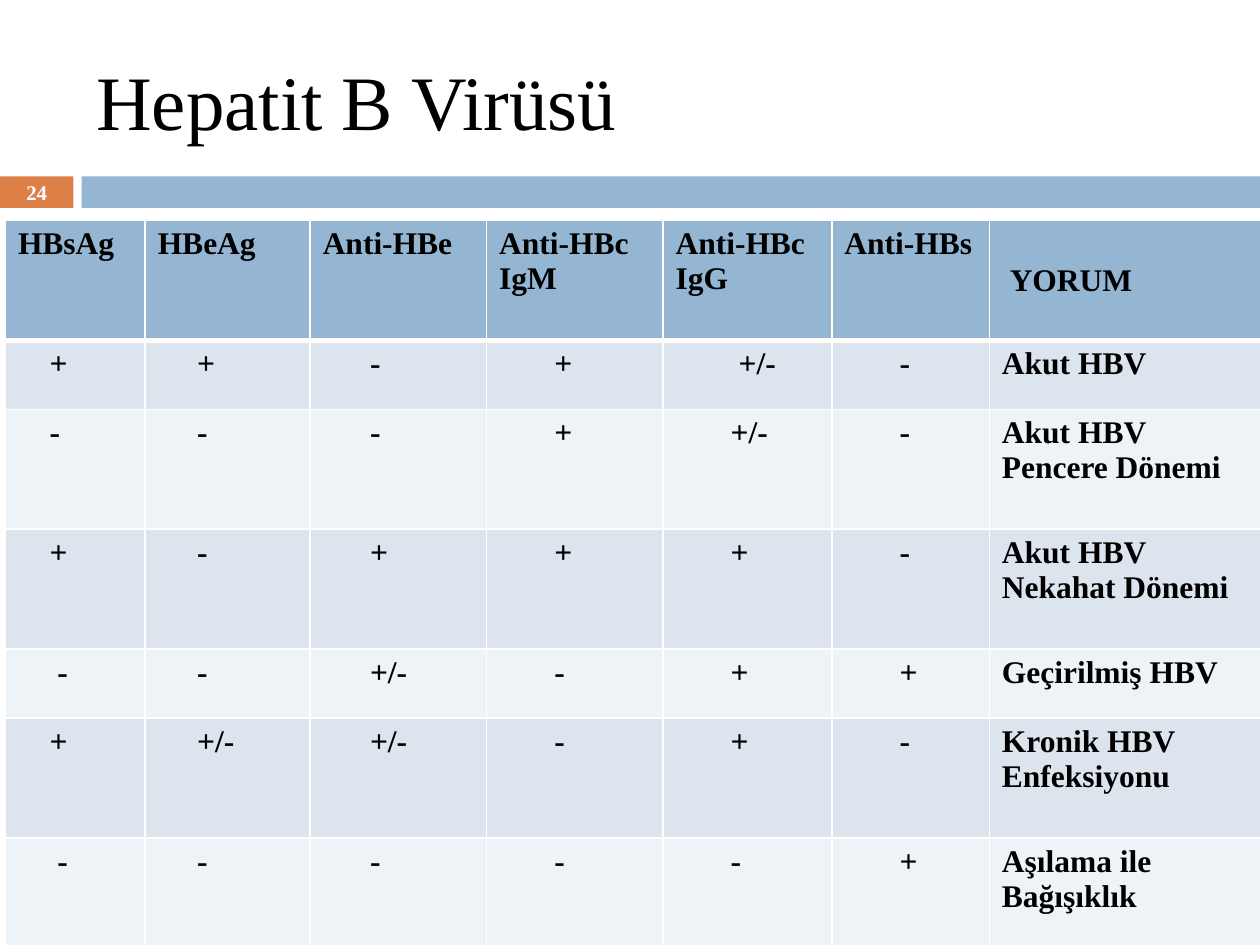
from dataclasses import dataclass

from lxml import etree
from pptx import Presentation
from pptx import util as u
from pptx.dml.color import RGBColor
from pptx.enum import shapes, text
from pptx.oxml import ns

Pt = u.Pt


@dataclass(frozen=True)
class Theme:
    """Colours, type sizes and line widths of the slide."""
    font: str = "Times New Roman"
    black: str = "000000"
    white: str = "FFFFFF"
    orange: str = "DD8047"
    blue: str = "94B6D2"
    bands: tuple = ("DCE5EE", "EEF3F7")
    title_size: float = 44
    number_size: float = 11.9
    table_size: float = 18
    rule: float = 1
    header_rule: float = 3


THEME = Theme()
BAR_TOP, BAR_HEIGHT = 100.8, 18
INSET, INDENT_STEP = 7.2, 4.5
COLUMN_WIDTHS = (79.9, 94.3, 100.8, 100.8, 96.5, 90, 156.2)
SHORT_ROW, TALL_ROW = 39.6, 68.4
MARKERS = ("HBsAg", "HBeAg", "Anti-HBe", "Anti-HBc IgM", "Anti-HBc IgG", "Anti-HBs")
MARKER_INDENTS = (4, 5, 6, 7, 7, 7)
EXTRA_INDENTS = {(1, 4), (4, 0), (6, 0)}
PROFILES = (
    ("+ + - + +/- -", ("Akut HBV",), SHORT_ROW),
    ("- - - + +/- -", ("Akut HBV", "Pencere Dönemi"), TALL_ROW),
    ("+ - + + + -", ("Akut HBV", "Nekahat Dönemi"), TALL_ROW),
    ("- - +/- - + +", ("Geçirilmiş HBV",), SHORT_ROW),
    ("+ +/- +/- - + -", ("Kronik HBV Enfeksiyonu",), TALL_ROW),
    ("- - - - - +", ("Aşılama ile Bağışıklık",), TALL_ROW),
)


def write(frame, lines, size, color, bold=False, align=None):
    """Write each line as a paragraph with one formatted run."""
    for index, line in enumerate(lines):
        paragraph = frame.add_paragraph() if index else frame.paragraphs[0]
        paragraph.alignment = align
        run = paragraph.add_run()
        run.text = line
        run.font.name, run.font.size, run.font.bold = THEME.font, Pt(size), bold
        run.font.color.rgb = RGBColor.from_string(color)


def add_bar(slide, left, width, color):
    """Add one part of the band under the title."""
    bar = slide.shapes.add_shape(
        shapes.MSO_SHAPE.RECTANGLE, Pt(left), Pt(BAR_TOP), Pt(width), Pt(BAR_HEIGHT))
    bar.shadow.inherit = False
    bar.fill.solid()
    bar.fill.fore_color.rgb = RGBColor.from_string(color)
    bar.line.fill.background()


def add_label(slide, box, label, size, color, inset=0, bold=False, align=None):
    """Add a vertically centred line of text."""
    frame = slide.shapes.add_textbox(*map(Pt, box)).text_frame
    frame.word_wrap = True
    frame.vertical_anchor = text.MSO_ANCHOR.MIDDLE
    frame.margin_left = frame.margin_right = Pt(inset)
    frame.margin_top = frame.margin_bottom = 0
    write(frame, [label], size, color, bold, align)


def set_borders(cell, top, bottom):
    """Draw white rules on all four sides of a cell."""
    properties = cell._tc.get_or_add_tcPr()
    widths = {"lnL": THEME.rule, "lnR": THEME.rule, "lnT": top, "lnB": bottom}
    for position, (side, width) in enumerate(widths.items()):
        rule = etree.Element(ns.qn(f"a:{side}"), w=str(Pt(width)))
        fill = etree.SubElement(rule, ns.qn("a:solidFill"))
        etree.SubElement(fill, ns.qn("a:srgbClr"), val=THEME.white)
        properties.insert(position, rule)


def fill_cell(cell, lines, color, indent=0, top=THEME.rule, bottom=THEME.rule):
    """Set the text, fill, indent and rules of a cell."""
    cell.fill.solid()
    cell.fill.fore_color.rgb = RGBColor.from_string(color)
    cell.margin_left = Pt(INSET + indent * INDENT_STEP)
    write(cell.text_frame, lines, THEME.table_size, THEME.black, bold=True)
    set_borders(cell, top, bottom)


def add_serology_table(slide):
    """Add the table of hepatitis B markers and their interpretation."""
    heights = [TALL_ROW] + [height for _, _, height in PROFILES]
    table = slide.shapes.add_table(
        len(heights), len(COLUMN_WIDTHS), Pt(3.1), Pt(126),
        Pt(sum(COLUMN_WIDTHS)), Pt(sum(heights))).table
    table.first_row = table.horz_banding = False
    for column, width in zip(table.columns, COLUMN_WIDTHS):
        column.width = Pt(width)
    for row, height in zip(table.rows, heights):
        row.height = Pt(height)

    last = len(MARKERS)
    for column, heading in enumerate((*MARKERS, "YORUM")):
        fill_cell(table.cell(0, column), [heading], THEME.blue,
                  indent=int(column == last), bottom=THEME.header_rule)
    table.cell(0, last).vertical_anchor = text.MSO_ANCHOR.MIDDLE

    for row, (results, comment, _) in enumerate(PROFILES, start=1):
        band = THEME.bands[(row - 1) % 2]
        top = THEME.header_rule if row == 1 else THEME.rule
        for column, result in enumerate(results.split()):
            indent = MARKER_INDENTS[column] + ((row, column) in EXTRA_INDENTS)
            fill_cell(table.cell(row, column), [result], band, indent, top)
        fill_cell(table.cell(row, last), comment, band, top=top)


def main():
    """Build and save the slide."""
    deck = Presentation()
    deck.slide_width, deck.slide_height = Pt(720), Pt(540)
    slide = deck.slides.add_slide(deck.slide_layouts[6])
    add_bar(slide, 0, 42, THEME.orange)
    add_bar(slide, 46.6, 673.4, THEME.blue)
    add_label(slide, (48, 18, 642, 78), "Hepatit B Virüsü",
              THEME.title_size, THEME.black, INSET)
    add_label(slide, (0, BAR_TOP, 42, BAR_HEIGHT), "24", THEME.number_size,
              THEME.white, bold=True, align=text.PP_ALIGN.CENTER)
    add_serology_table(slide)
    deck.save("out.pptx")


if __name__ == "__main__":
    main()
